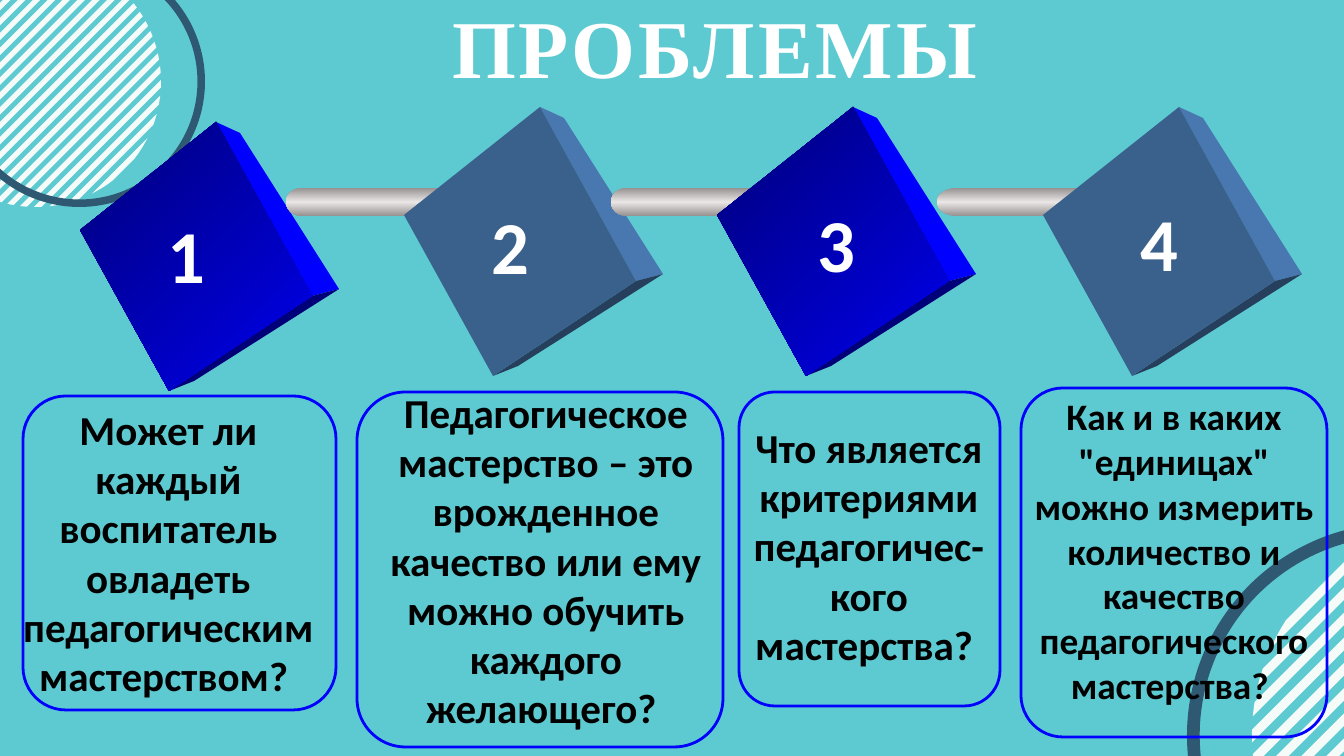
from copy import deepcopy
from math import acos, cos, pi, sin

from pptx import Presentation
from pptx.dml.color import RGBColor
from pptx.enum.shapes import MSO_SHAPE
from pptx.enum.text import MSO_ANCHOR, MSO_AUTO_SIZE, PP_ALIGN
from pptx.util import Emu, Pt

EMU_PER_PX = 914400 / 67.2

TEAL = RGBColor(0x5D, 0xCA, 0xD1)
MINT = RGBColor(0xF5, 0xFB, 0xF9)
SLATE = RGBColor(0x2F, 0x59, 0x72)
WHITE = RGBColor(0xFF, 0xFF, 0xFF)
BLACK = RGBColor(0x00, 0x00, 0x00)
BLUE = RGBColor(0x00, 0x00, 0xFF)
BRIGHT_BLUE = RGBColor(0x00, 0x00, 0xEE)
NAVY = RGBColor(0x00, 0x00, 0x78)
STEEL = RGBColor(0x3A, 0x60, 0x8C)
LIGHT_STEEL = RGBColor(0x49, 0x77, 0xB0)
DARK_STEEL = RGBColor(0x26, 0x3F, 0x5C)
PIPE_EDGE = RGBColor(0x96, 0x92, 0x92)
PIPE_SHINE = RGBColor(0xEA, 0xE6, 0xE6)

# Each cube: front colours (one is solid, two are a gradient), side, underside
BLUE_CUBE = ([NAVY, BRIGHT_BLUE], BLUE, NAVY)
STEEL_CUBE = ([STEEL], LIGHT_STEEL, DARK_STEEL)

# Corners of a cube, measured from its upper left
LEFT, TOP, RIGHT, BOTTOM = (0, 108), (136, 0), (232, 174), (89, 269)
BACK_TOP, BACK_RIGHT, BACK_BOTTOM = (160, 11), (259, 167), (114, 259)

CUBES = [
    (80, 122, BLUE_CUBE),
    (404, 107, STEEL_CUBE),
    (717, 107, BLUE_CUBE),
    (1043, 107, STEEL_CUBE),
]
# Left, cap width, bar left, bar width; one pipe leads into each later cube
PIPES = [(286, 30, 302, 147), (611, 30, 628, 147), (937, 39, 959, 192)]
NUMBER_CORNERS = [(161, 206), (485, 197), (811, 195), (1134, 194)]
FRAMES = [
    (1021, 388, 306, 349),
    (739, 392, 261, 314),
    (357, 392, 366, 355),
    (23, 396, 313, 314),
]
QUESTIONS = [
    ((1, 401, 335, 305), 44,
     "Может ли каждый воспитатель овладеть педагогическим мастерством? "),
    ((353, 384, 386, 355), 44,
     "Педагогическое мастерство – это врожденное качество или ему можно "
     "обучить каждого желающего? "),
    ((745, 419, 248, 255), 44,
     "Что является критериями педагогичес-кого мастерства? "),
    ((1021, 390, 306, 323), 40,
     "Как и в каких \"единицах\" можно измерить количество и качество "
     "педагогического мастерства? "),
]


def px(length):
    return Emu(round(length * EMU_PER_PX))


class SlideBuilder:
    def __init__(self, slide, body_font="Calibri", title_font="Times New Roman"):
        self.slide = slide
        self.shapes = slide.shapes
        self.body_font = body_font
        self.title_font = title_font

    def background(self, color):
        fill = self.slide.background.fill
        fill.solid()
        fill.fore_color.rgb = color

    def paint(self, shape, colors, angle=0):
        """Fill without outline: one colour is solid, more are an even gradient."""
        shape.shadow.inherit = False
        shape.line.fill.background()
        if len(colors) == 1:
            shape.fill.solid()
            shape.fill.fore_color.rgb = colors[0]
            return
        shape.fill.gradient()
        shape.fill.gradient_angle = angle
        stop_list = shape.fill._fill._gradFill.gsLst
        for _ in colors[2:]:
            stop_list.append(deepcopy(stop_list[0]))
        for i, (stop, color) in enumerate(zip(shape.fill.gradient_stops, colors)):
            stop.color.rgb = color
            stop.position = i / (len(colors) - 1)

    def preset(self, kind, box, colors, angle=0):
        shape = self.shapes.add_shape(kind, *map(px, box))
        self.paint(shape, colors, angle)
        return shape

    def outline(self, contours, colors, angle=0):
        builder = None
        for contour in contours:
            start, *rest = [(px(x), px(y)) for x, y in contour]
            if builder is None:
                builder = self.shapes.build_freeform(*start, scale=1.0)
            else:
                builder.move_to(*start)
            builder.add_line_segments(rest, close=True)
        self.paint(builder.convert_to_shape(), colors, angle)

    def striped_disc(self, left, top, size, stripes=24, arc_steps=4):
        """Disc cut into diagonal bands, with half of each period left open."""
        radius = size / 2
        period = 0.0838 * radius
        first = -radius + 0.27 * period
        bands = []
        for k in range(stripes):
            near = acos((first + k * period) / radius)
            far = acos((first + (k + 0.5) * period) / radius)
            arc = [near + (far - near) * i / arc_steps for i in range(arc_steps + 1)]
            angles = [pi / 4 + a for a in arc] + [pi / 4 - a for a in reversed(arc)]
            bands.append([(left + radius + radius * cos(a),
                           top + radius + radius * sin(a)) for a in angles])
        self.outline(bands, [MINT])

    def ring(self, left, top, size):
        ring = self.preset(MSO_SHAPE.DONUT, (left, top, size, size), [SLATE])
        ring.adjustments[0] = 0.03

    def cube(self, left, top, palette):
        front, side, underside = palette
        faces = [
            ([TOP, BACK_TOP, BACK_RIGHT, RIGHT], [side]),
            ([BOTTOM, BACK_BOTTOM, BACK_RIGHT, RIGHT], [underside]),
            ([LEFT, TOP, RIGHT, BOTTOM], front),
        ]
        for corners, colors in faces:
            self.outline([[(left + x, top + y) for x, y in corners]], colors, 315)

    def pipe(self, cap_left, cap_width, bar_left, bar_width):
        metal = [PIPE_EDGE, PIPE_SHINE, PIPE_EDGE]
        self.preset(MSO_SHAPE.OVAL, (cap_left, 188, cap_width, 28), metal, 270)
        self.preset(MSO_SHAPE.RECTANGLE, (bar_left, 188, bar_width, 28), metal, 270)

    def frame(self, box):
        frame = self.shapes.add_shape(MSO_SHAPE.ROUNDED_RECTANGLE, *map(px, box))
        frame.adjustments[0] = 0.137
        frame.shadow.inherit = False
        frame.fill.background()
        frame.line.color.rgb = BLUE
        frame.line.width = Pt(3)

    def style_run(self, run, font, size, color):
        run.font.name = font
        run.font.size = Pt(size)
        run.font.bold = True
        run.font.color.rgb = color

    def text(self, box, wording, size, color, align=PP_ALIGN.LEFT):
        frame = self.shapes.add_textbox(*map(px, box)).text_frame
        frame.word_wrap = True
        frame.text = wording
        frame.paragraphs[0].alignment = align
        self.style_run(frame.paragraphs[0].runs[0], self.body_font, size, color)

    def title(self, box, wording):
        title = self.shapes.title
        title.left, title.top, title.width, title.height = map(px, box)
        frame = title.text_frame
        frame.margin_left = frame.margin_right = 0
        frame.margin_top = frame.margin_bottom = 0
        frame.vertical_anchor = MSO_ANCHOR.TOP
        frame.auto_size = MSO_AUTO_SIZE.NONE
        frame.text = wording
        paragraph = frame.paragraphs[0]
        paragraph.alignment = PP_ALIGN.LEFT
        paragraph.line_spacing = Pt(40.3)
        run = paragraph.runs[0]
        self.style_run(run, self.title_font, 88, WHITE)
        run.font._element.set("spc", "340")


def main():
    deck = Presentation()
    deck.slide_width, deck.slide_height = px(1344), px(756)
    builder = SlideBuilder(deck.slides.add_slide(deck.slide_layouts[5]))
    builder.background(TEAL)
    for disc_left, ring_left, top, size in [(-90, -46, -44, 251),
                                            (1252, 1187, 523, 425)]:
        builder.striped_disc(disc_left, top, size)
        builder.ring(ring_left, top, size)
    builder.title((452, 57, 880, 48), "ПРОБЛЕМЫ")
    for box in FRAMES:
        builder.frame(box)
    for i, cube in enumerate(CUBES):
        if i > 0:
            builder.pipe(*PIPES[i - 1])
        builder.cube(*cube)
    for number, corner in enumerate(NUMBER_CORNERS, start=1):
        builder.text((*corner, 165, 97), str(number), 80, WHITE)
    for box, size, question in QUESTIONS:
        builder.text(box, question, size, BLACK, PP_ALIGN.CENTER)
    deck.save("out.pptx")


if __name__ == "__main__":
    main()
